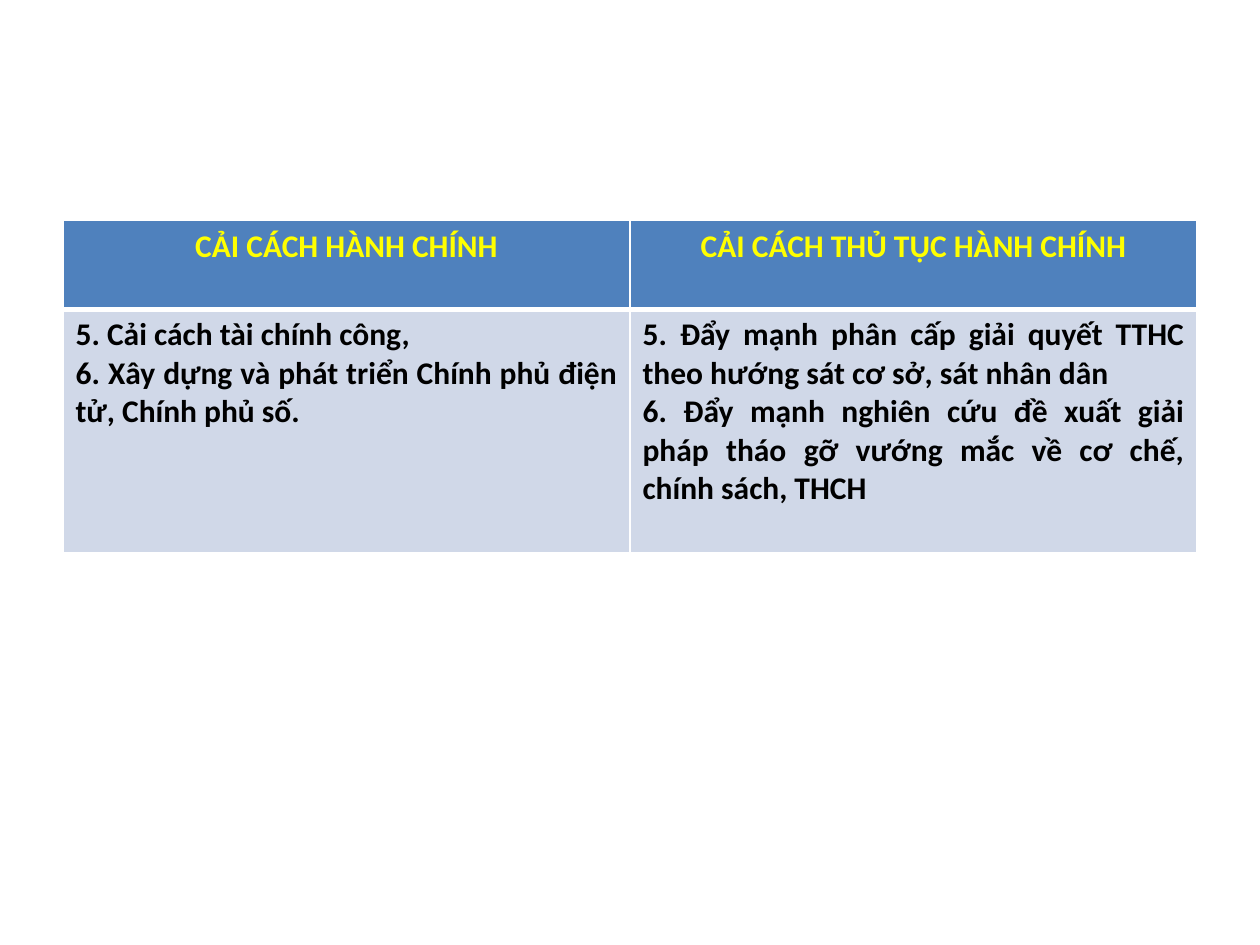
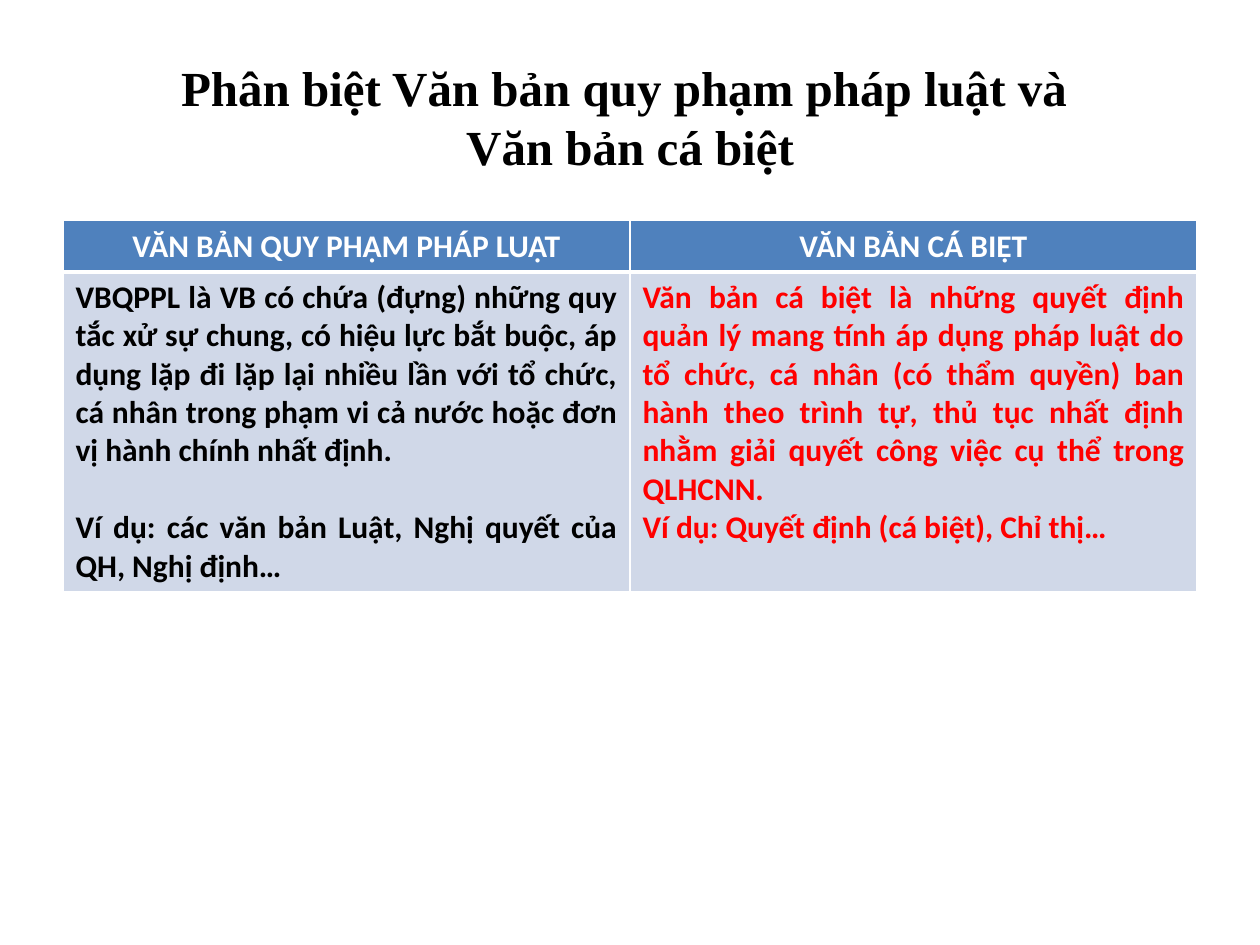
"""Build two slides that compare pairs of administrative terms in tables."""
from lxml.etree import SubElement
from pptx import Presentation
from pptx.dml.color import RGBColor
from pptx.enum.text import MSO_ANCHOR as Anchor, PP_ALIGN as Align
from pptx.oxml.ns import qn
from pptx.util import Cm, Pt

BLUE = RGBColor(0x4F, 0x81, 0xBD)
PALE = RGBColor(0xD0, 0xD8, 0xE8)
WHITE = RGBColor(0xFF, 0xFF, 0xFF)
BLACK = RGBColor(0, 0, 0)
RED = RGBColor(0xFF, 0, 0)
YELLOW = RGBColor(0xFF, 0xFF, 0)

SLIDES = [
    {
        "title": None,
        "heads": ["CẢI CÁCH HÀNH CHÍNH", "CẢI CÁCH THỦ TỤC HÀNH CHÍNH"],
        "bodies": [
            ["5. Cải cách tài chính công, ",
             "6. Xây dựng và phát triển Chính phủ điện tử, Chính phủ số."],
            ["5. Đẩy mạnh phân cấp giải quyết TTHC theo hướng sát cơ sở, "
             "sát nhân dân",
             "6. Đẩy mạnh nghiên cứu đề xuất giải pháp tháo gỡ vướng mắc "
             "về cơ chế, chính sách, THCH"],
        ],
        "inks": [YELLOW, BLACK, BLACK],
        "gaps": [0, 0],
        "rows": [1.79, 4.9],
    },
    {
        "title": "Phân biệt Văn bản quy phạm pháp luật và \vVăn bản cá biệt",
        "heads": ["VĂN BẢN QUY PHẠM PHÁP LUẬT", "VĂN BẢN CÁ BIỆT"],
        "bodies": [
            ["VBQPPL là VB có chứa (đựng) những quy tắc xử sự chung, có hiệu "
             "lực bắt buộc, áp dụng lặp đi lặp lại nhiều lần với tổ chức, cá "
             "nhân trong phạm vi cả nước hoặc đơn vị hành chính nhất định.",
             "Ví dụ: các văn bản Luật, Nghị quyết của QH, Nghị định…"],
            ["Văn bản cá biệt là những quyết định quản lý mang tính áp dụng "
             "pháp luật do tổ chức, cá nhân (có thẩm quyền) ban hành theo "
             "trình tự, thủ tục nhất định nhằm giải quyết công việc cụ thể "
             "trong QLHCNN.",
             "Ví dụ: Quyết định (cá biệt), Chỉ thị…"],
        ],
        "inks": [WHITE, BLACK, RED],
        "gaps": [22, 0],
        "rows": [1.03, 6.36],
    },
]

LEFT, WIDE = 1.27, 22.86
TITLE = {"left": Cm(LEFT), "top": Cm(0.76), "width": Cm(WIDE),
         "height": Cm(3.18)}
TABLE_TOP = 4.45
EDGES = {"head": {"L": 1, "R": 1, "T": 1, "B": 3},
         "body": {"L": 1, "R": 1, "T": 3, "B": 1}}


def apply(obj, vals):
    """Set each attribute named in a dict."""
    for name, val in vals.items():
        setattr(obj, name, val)


def style(par, align, face, size, ink):
    """Format a paragraph and its runs."""
    par.alignment = align
    for run in par.runs:
        apply(run.font, {"name": face, "size": Pt(size), "bold": True})
        run.font.color.rgb = ink


def add_title(slide, text):
    """Fill and place the title."""
    box = slide.shapes.title
    apply(box, TITLE)
    frame = box.text_frame
    apply(frame, {"text": text, "word_wrap": True,
                  "vertical_anchor": Anchor.MIDDLE})
    par = frame.paragraphs[0]
    style(par, Align.CENTER, "Times New Roman", 28, BLACK)
    for gap in par._p.findall(qn("a:br")):
        SubElement(gap, qn("a:rPr"), sz="2800", b="1")


def fill_cell(cell, kind, pars, ink, gap=0):
    """Write, border and fill one table cell."""
    align, back = {"head": (Align.CENTER, BLUE),
                   "body": (Align.JUSTIFY, PALE)}[kind]
    cell.text = "\n".join(pars)
    for par in cell.text_frame.paragraphs:
        style(par, align, "Calibri", 18, ink)
    if gap:
        par.space_before = Pt(gap)
    props = cell._tc.get_or_add_tcPr()
    for side, width in EDGES[kind].items():
        line = SubElement(props, qn(f"a:ln{side}"), w=str(Pt(width)))
        SubElement(SubElement(line, qn("a:solidFill")), qn("a:srgbClr"),
                   val=str(WHITE))
    cell.fill.solid()
    cell.fill.fore_color.rgb = back


def add_pair(slide, data):
    """Add the table that sets two terms side by side."""
    rows = data["rows"]
    grid = slide.shapes.add_table(2, 2, Cm(LEFT), Cm(TABLE_TOP), Cm(WIDE),
                                  Cm(sum(rows))).table
    for row, tall in zip(grid.rows, rows):
        row.height = Cm(tall)
    top, *inks = data["inks"]
    for col, head in enumerate(data["heads"]):
        fill_cell(grid.cell(0, col), "head", [head], top)
        fill_cell(grid.cell(1, col), "body", data["bodies"][col],
                  inks[col], data["gaps"][col])


def main():
    """Build and save the deck."""
    deck = Presentation()
    apply(deck, {"slide_width": Cm(25.4), "slide_height": Cm(19.05)})
    for data in SLIDES:
        layout = "Title Only" if data["title"] else "Blank"
        slide = deck.slides.add_slide(deck.slide_layouts.get_by_name(layout))
        if data["title"]:
            add_title(slide, data["title"])
        add_pair(slide, data)
    deck.save("out.pptx")


if __name__ == "__main__":
    main()
